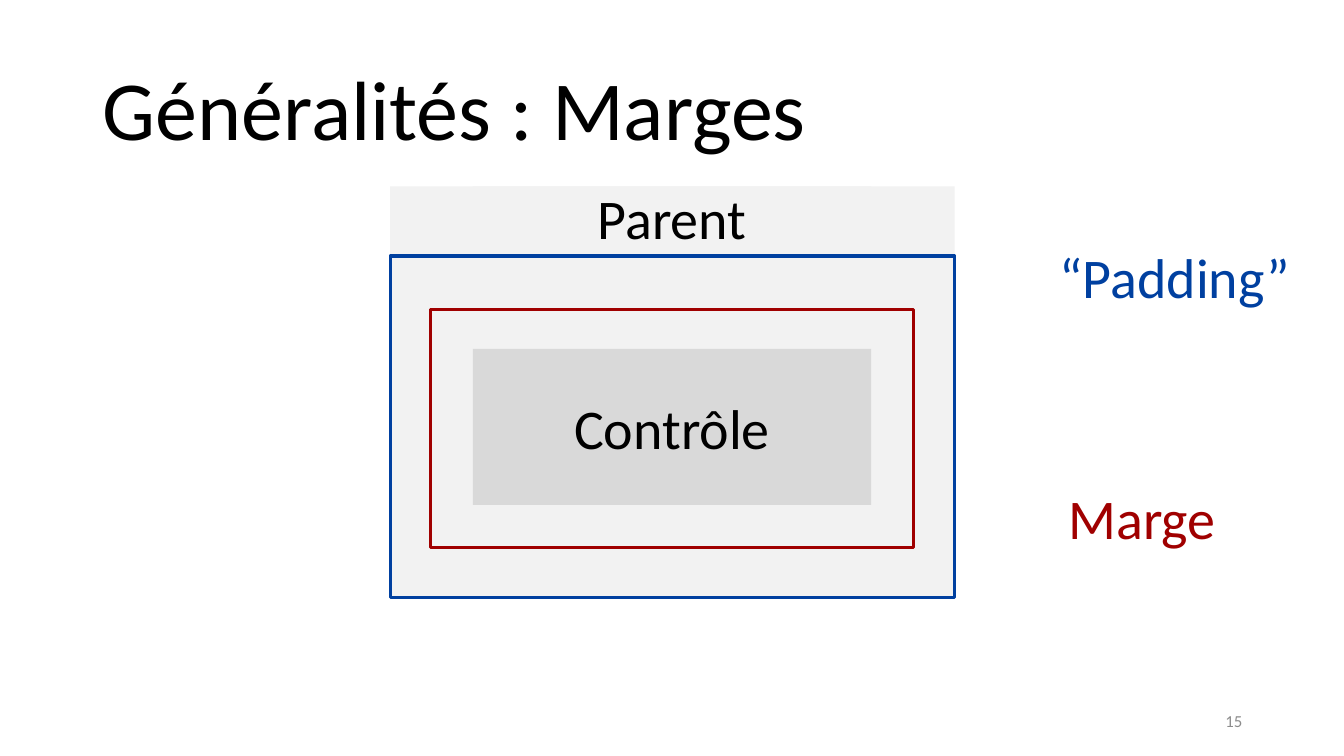
from pptx import Presentation
from pptx import util as u
from pptx.dml.color import RGBColor
from pptx.enum import shapes, text

BLACK, GREY = "000000", "8C8C8C"
LIGHT, MID = "F2F2F2", "D9D9D9"
RED, BLUE = "A00000", "0040A0"


def color(code):
    return RGBColor.from_string(code)


class MarginPage:
    """Holds the text style and the slide being drawn."""

    font = "Calibri"
    label_size = 40

    def __init__(self, deck):
        self.page = deck.slides.add_slide(deck.slide_layouts[5])

    def set_words(self, shape, words, size, ink, align, anchor):
        frame = shape.text_frame
        frame.text = words
        frame.word_wrap = True
        frame.auto_size = text.MSO_AUTO_SIZE.NONE
        frame.vertical_anchor = anchor
        para = frame.paragraphs[0]
        para.alignment = align
        for span in para.runs:
            span.font.name = self.font
            span.font.size = u.Pt(size)
            span.font.color.rgb = color(ink)

    def title(self, words, left, top, width, height):
        box = self.page.shapes.title
        box.left, box.top = u.Inches(left), u.Inches(top)
        box.width, box.height = u.Inches(width), u.Inches(height)
        self.set_words(box, words, 60, BLACK, text.PP_ALIGN.LEFT, text.MSO_ANCHOR.MIDDLE)
        box.text_frame.paragraphs[0].line_spacing = 0.9

    def label(self, words, left, top, width, height, ink, size=label_size,
              align=text.PP_ALIGN.LEFT, anchor=text.MSO_ANCHOR.TOP):
        box = self.page.shapes.add_textbox(*map(u.Inches, (left, top, width, height)))
        self.set_words(box, words, size, ink, align, anchor)

    def rectangle(self, left, top, width, height, fill=None, line=None, words=None):
        box = self.page.shapes.add_shape(
            shapes.MSO_SHAPE.RECTANGLE, *map(u.Inches, (left, top, width, height)))
        box.shadow.inherit = False
        if fill:
            box.fill.solid()
            box.fill.fore_color.rgb = color(fill)
        else:
            box.fill.background()
        if line:
            box.line.color.rgb = color(line)
            box.line.width = u.Pt(2.25)
        else:
            box.line.fill.background()
        if words:
            self.set_words(box, words, self.label_size, BLACK,
                           text.PP_ALIGN.CENTER, text.MSO_ANCHOR.MIDDLE)


def main():
    deck = Presentation()
    deck.slide_width, deck.slide_height = u.Inches(13.33), u.Inches(7.5)
    page = MarginPage(deck)

    page.title("Généralités : Marges", 0.92, 0.4, 11.5, 1.45)
    page.label("15", 9.42, 6.95, 3, 0.4, GREY, size=12,
               align=text.PP_ALIGN.RIGHT, anchor=text.MSO_ANCHOR.MIDDLE)

    page.rectangle(3.87, 1.85, 5.6, 4.09, fill=LIGHT)
    page.rectangle(4.69, 3.46, 3.95, 1.55, fill=MID, words="Contrôle")
    page.rectangle(4.69, 1.85, 3.95, 0.6, fill=LIGHT, words="Parent")
    page.rectangle(4.27, 3.07, 4.79, 2.36, line=RED)
    page.rectangle(3.87, 2.54, 5.6, 3.39, line=BLUE)

    page.label("Marge", 10.5, 4.75, 1.96, 0.77, RED)
    page.label("“Padding”", 10.41, 2.36, 2.51, 0.77, BLUE)

    deck.save("out.pptx")


if __name__ == "__main__":
    main()
